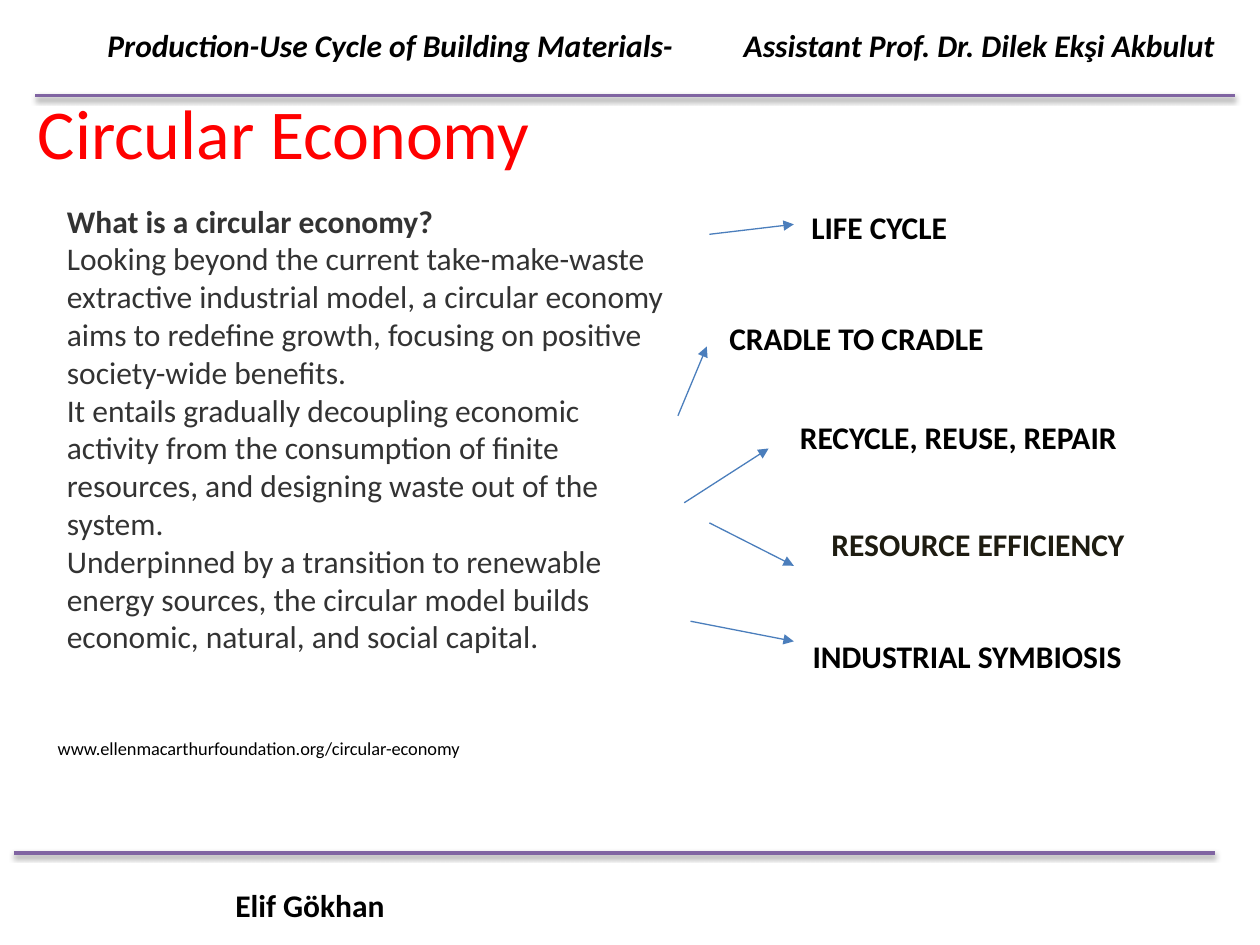
"""Build the Circular Economy slide."""
from dataclasses import dataclass

import lxml.etree
import pptx
import pptx.dml.color
import pptx.enum.shapes
import pptx.enum.text
import pptx.oxml.ns
import pptx.util

FONT = "Calibri"
BLACK = "000000"
DARK_GREY = "333333"
PURPLE = "8064A2"
BLUE = "4B7EBC"


@dataclass
class Label:
    """A key term beside the text, placed in points."""

    text: str
    left: float
    top: float
    width: float
    color: str = BLACK


@dataclass
class Line:
    """A straight line between two points, in points."""

    x1: float
    y1: float
    x2: float
    y2: float


LABELS = [
    Label("LIFE CYCLE", 456.5, 115.2, 93),
    Label("CRADLE TO CRADLE", 409.7, 178.6, 161.3),
    Label("RECYCLE, REUSE, REPAIR", 450, 235.4, 197.3),
    Label("RESOURCE EFFICIENCY", 468, 296.6, 183.6, "1E1C11"),
    Label("INDUSTRIAL SYMBIOSIS", 457.2, 360.7, 193),
]
ARROWS = [
    Line(405.4, 133.9, 453.6, 128.2),
    Line(387.4, 237.6, 403.9, 198),
    Line(391, 287.3, 439.2, 256.3),
    Line(405.4, 298.8, 453.6, 323.3),
    Line(394.6, 355, 453.6, 366.5),
]
RULES = [Line(20.2, 54.7, 705.6, 54.7), Line(7.9, 487.4, 694.1, 487.4)]
DEFINITION = [
    "What is a circular economy?",
    "Looking beyond the current take-make-waste extractive industrial model, "
    "a circular economy aims to redefine growth, focusing on positive "
    "society-wide benefits.",
    "It entails gradually decoupling economic activity from the consumption "
    "of finite resources, and designing waste out of the system.",
    "Underpinned by a transition to renewable energy sources, the circular "
    "model builds economic, natural, and social capital.",
]


def rgb(color: str) -> pptx.dml.color.RGBColor:
    """Turn a hex string into a colour."""
    return pptx.dml.color.RGBColor.from_string(color)


def add_element(parent, tag: str, **attributes: str):
    """Append a DrawingML element and return it."""
    element = lxml.etree.SubElement(parent, pptx.oxml.ns.qn(tag))
    for name, value in attributes.items():
        element.set(name, value)
    return element


def place(shape, left: float, top: float, width: float, height: float) -> None:
    """Move and size a shape in points."""
    shape.left, shape.top = pptx.util.Pt(left), pptx.util.Pt(top)
    shape.width, shape.height = pptx.util.Pt(width), pptx.util.Pt(height)


def write_paragraph(paragraph, text: str, *, size: float = 18, color: str = BLACK,
                    bold: bool = False, italic: bool = False) -> None:
    """Write left-aligned text into a paragraph."""
    paragraph.alignment = pptx.enum.text.PP_ALIGN.LEFT
    run = paragraph.add_run()
    run.text = text
    run.font.name = FONT
    run.font.size = pptx.util.Pt(size)
    run.font.bold = bold
    run.font.italic = italic
    run.font.color.rgb = rgb(color)


def add_text(slide, text: str, left: float, top: float, width: float,
             height: float = 28.8, *, wrap: bool = False, **text_format):
    """Add a one-paragraph text box and return its frame."""
    box = slide.shapes.add_textbox(*map(pptx.util.Pt, (left, top, width, height)))
    box.text_frame.word_wrap = wrap
    write_paragraph(box.text_frame.paragraphs[0], text, **text_format)
    return box.text_frame


def add_line(slide, line: Line, color: str, width: float):
    """Add a plain connector and return it with its effect list."""
    connector = slide.shapes.add_connector(
        pptx.enum.shapes.MSO_CONNECTOR.STRAIGHT,
        *map(pptx.util.Pt, (line.x1, line.y1, line.x2, line.y2)))
    connector.line.color.rgb = rgb(color)
    connector.line.width = pptx.util.Pt(width)
    effects = add_element(connector.element.spPr, "a:effectLst")
    return connector, effects


def add_rule(slide, line: Line) -> None:
    """Add a purple rule with a soft shadow."""
    _, effects = add_line(slide, line, PURPLE, 2)
    shadow = add_element(effects, "a:outerShdw", blurRad=str(pptx.util.Pt(3.1)),
                         dist=str(pptx.util.Pt(1.6)), dir="5400000", rotWithShape="0")
    shadow_color = add_element(shadow, "a:srgbClr", val=BLACK)
    add_element(shadow_color, "a:alpha", val="38000")


def add_arrow(slide, line: Line) -> None:
    """Add a thin blue arrow."""
    connector, _ = add_line(slide, line, BLUE, 0.75)
    add_element(connector.line._get_or_add_ln(), "a:tailEnd", type="triangle")


def add_header(slide) -> None:
    """Add the course name and the lecturer, parted by a tab stop."""
    frame = add_text(
        slide, "Production-Use Cycle of Building Materials-\t"
        "Assistant Prof. Dr. Dilek Ekşi Akbulut", 45.4, 11.5, 668.9,
        wrap=True, bold=True, italic=True)
    frame.margin_left = pptx.util.Pt(16)
    frame.margin_right = 0
    properties = frame.paragraphs[0]._p.get_or_add_pPr()
    tabs = add_element(properties, "a:tabLst")
    add_element(tabs, "a:tab", pos=str(pptx.util.Pt(363.6)), algn="l")


def fill_title(title) -> None:
    """Write the slide title."""
    place(title, 14.4, 30.2, 705.6, 90)
    title.text_frame.vertical_anchor = pptx.enum.text.MSO_ANCHOR.MIDDLE
    write_paragraph(title.text_frame.paragraphs[0], "Circular Economy",
                    size=40, color="FF0000")


def fill_body(body) -> None:
    """Write the definition without bullets."""
    place(body, 31, 111.6, 360, 290.9)
    frame = body.text_frame
    frame.auto_size = pptx.enum.text.MSO_AUTO_SIZE.NONE
    for index, text in enumerate(DEFINITION):
        paragraph = frame.add_paragraph() if index else frame.paragraphs[0]
        paragraph.space_before = pptx.util.Pt(0)
        properties = paragraph._p.get_or_add_pPr()
        properties.set("marL", "0")
        properties.set("indent", "0")
        add_element(properties, "a:buNone")
        write_paragraph(paragraph, text, color=DARK_GREY, bold=index == 0)


def main() -> None:
    """Build and save the presentation."""
    presentation = pptx.Presentation()
    presentation.slide_width = pptx.util.Pt(720)
    presentation.slide_height = pptx.util.Pt(540)
    slide = presentation.slides.add_slide(presentation.slide_layouts[1])
    for rule in RULES:
        add_rule(slide, rule)
    add_header(slide)
    add_text(slide, "Elif Gökhan", 127.4, 502.6, 100.8, bold=True)
    fill_title(slide.shapes.title)
    fill_body(slide.placeholders[1])
    for label in LABELS:
        add_text(slide, label.text, label.left, label.top, label.width,
                 color=label.color, bold=True)
    for arrow in ARROWS:
        add_arrow(slide, arrow)
    add_text(slide, "www.ellenmacarthurfoundation.org/circular-economy",
             25.9, 417.6, 360, 20.2, wrap=True, size=10.5)
    presentation.save("out.pptx")


if __name__ == "__main__":
    main()
